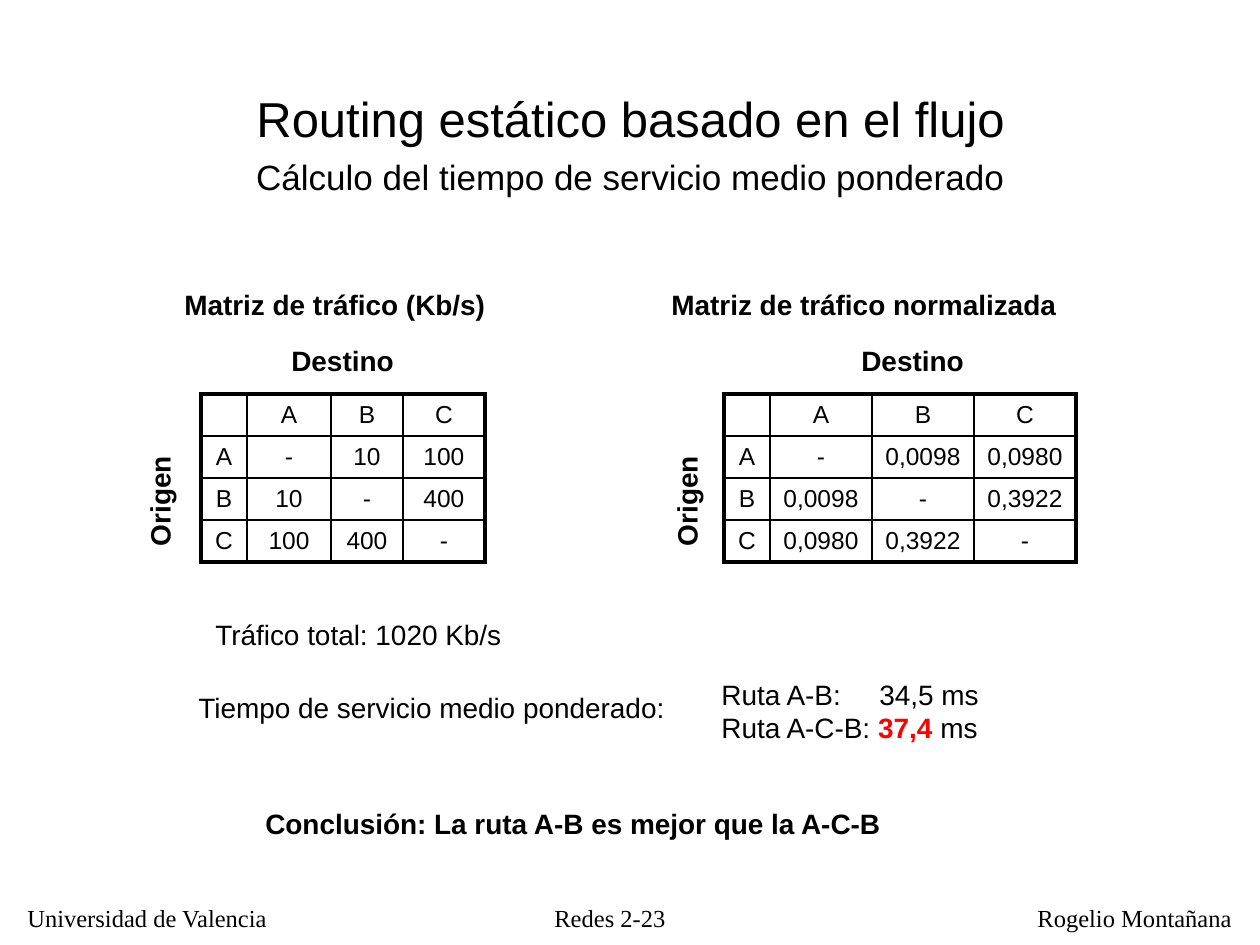
from dataclasses import dataclass

from lxml.etree import SubElement
from pptx import Presentation
from pptx.dml.color import RGBColor
from pptx.enum.text import MSO_ANCHOR, PP_ALIGN
from pptx.oxml.ns import qn
from pptx.util import Pt

EMU_PER_PX = 914400 / 126


@dataclass(frozen=True)
class Theme:
    ink: str = "000000"
    accent: str = "FF0000"
    sans: str = "Arial"
    serif: str = "Times New Roman"
    title: int = 28
    subtitle: int = 20
    body: int = 16
    small: int = 14
    thin: float = 1
    thick: float = 2.25


THEME = Theme()

TITLE = "Routing estático basado en el flujo"
SUBTITLE = "Cálculo del tiempo de servicio medio ponderado"

# text, box (left, top, width, height), alignment
FOOTERS = [
    ("Universidad de Valencia", (15, 897, 275, 41), PP_ALIGN.LEFT),
    ("Redes 2-23", (530, 897, 160, 39), PP_ALIGN.CENTER),
    ("Rogelio Montañana", (1025, 897, 230, 41), PP_ALIGN.LEFT),
]

NODES = ["A", "B", "C"]
MATRICES = [
    {
        "caption": ("Matriz de tráfico (Kb/s)", 172, 328),
        "destination_left": 279,
        "origin_left": 102,
        "table_left": 201,
        "columns": [46, 84, 72, 82],
        "values": [["-", "10", "100"], ["10", "-", "400"], ["100", "400", "-"]],
    },
    {
        "caption": ("Matriz de tráfico normalizada", 659, 412),
        "destination_left": 849,
        "origin_left": 629,
        "table_left": 724,
        "columns": [46, 102, 102, 102],
        "values": [
            ["-", "0,0098", "0,0980"],
            ["0,0098", "-", "0,3922"],
            ["0,0980", "0,3922", "-"],
        ],
    },
]
CAPTION_TOP, DESTINATION_TOP, ORIGIN_TOP, TABLE_TOP = 281, 337, 477, 394
ROW_HEIGHT = 42
LINE_HEIGHT = 47

# text, box, bold
STATEMENTS = [
    ("Tráfico total: 1020 Kb/s", (203, 611, 314, LINE_HEIGHT), False),
    ("Tiempo de servicio medio ponderado:", (186, 684, 494, LINE_HEIGHT), False),
    ("Conclusión: La ruta A-B es mejor que la A-C-B", (253, 800, 645, LINE_HEIGHT), True),
]

ROUTES_BOX = (709, 671, 286, 81)
ROUTE_TAB = 158
DIRECT_ROUTE = "Ruta A-B:\t34,5 ms"
INDIRECT_ROUTE = ["Ruta A-C-B: ", "37,4", " ms"]


def px(length):
    return round(length * EMU_PER_PX)


def set_font(font, size, name=THEME.sans, bold=False, color=THEME.ink):
    font.size = Pt(size)
    font.name = name
    font.bold = bold
    font.color.rgb = RGBColor.from_string(color)


def add_text(slide, lines, box, size=THEME.body, wrap=False, align=PP_ALIGN.LEFT, **style):
    """Add a text box with one paragraph for each line."""
    shape = slide.shapes.add_textbox(*map(px, box))
    frame = shape.text_frame
    frame.word_wrap = wrap
    frame.text = "\n".join(lines)
    for paragraph in frame.paragraphs:
        paragraph.alignment = align
        set_font(paragraph.font, size, **style)
    return shape


def add_title(slide):
    shape = add_text(slide, [TITLE, SUBTITLE], (95, 79, 1071, 116),
                     THEME.title, wrap=True, align=PP_ALIGN.CENTER)
    frame = shape.text_frame
    frame.vertical_anchor = MSO_ANCHOR.MIDDLE
    for paragraph in frame.paragraphs:
        paragraph.line_spacing = 1.2
    frame.paragraphs[1].font.size = Pt(THEME.subtitle)


def set_borders(cell, widths):
    """Draw the cell's edges; widths are points for left, right, top, bottom."""
    properties = cell._tc.get_or_add_tcPr()
    for position, (tag, width) in enumerate(zip(("a:lnL", "a:lnR", "a:lnT", "a:lnB"), widths)):
        line = SubElement(properties, qn(tag), w=str(Pt(width)))
        fill = SubElement(line, qn("a:solidFill"))
        SubElement(fill, qn("a:srgbClr"), val=THEME.ink)
        properties.insert(position, line)


def add_matrix_table(slide, matrix):
    rows = [["", *NODES]] + [[node, *values] for node, values in zip(NODES, matrix["values"])]
    columns = matrix["columns"]
    last_row, last_column = len(rows) - 1, len(columns) - 1
    table = slide.shapes.add_table(
        len(rows), len(columns), px(matrix["table_left"]), px(TABLE_TOP),
        px(sum(columns)), px(ROW_HEIGHT * len(rows))).table
    table.first_row = table.horz_banding = False
    for column, width in zip(table.columns, columns):
        column.width = px(width)
    for r, row in enumerate(rows):
        table.rows[r].height = px(ROW_HEIGHT)
        for c, text in enumerate(row):
            cell = table.cell(r, c)
            cell.text = text
            cell.fill.background()
            cell.vertical_anchor = MSO_ANCHOR.MIDDLE
            cell.margin_left = cell.margin_right = cell.margin_top = cell.margin_bottom = 0
            paragraph = cell.text_frame.paragraphs[0]
            paragraph.alignment = PP_ALIGN.CENTER
            set_font(paragraph.font, THEME.small)
            outer = (c == 0, c == last_column, r == 0, r == last_row)
            set_borders(cell, [THEME.thick if edge else THEME.thin for edge in outer])


def add_matrix(slide, matrix):
    caption, left, width = matrix["caption"]
    add_text(slide, [caption], (left, CAPTION_TOP, width, LINE_HEIGHT), bold=True)
    add_text(slide, ["Destino"],
             (matrix["destination_left"], DESTINATION_TOP, 129, LINE_HEIGHT), bold=True)
    origin = add_text(slide, ["Origen"],
                      (matrix["origin_left"], ORIGIN_TOP, 116, LINE_HEIGHT), bold=True)
    origin.rotation = 270
    add_matrix_table(slide, matrix)


def add_routes(slide):
    shape = add_text(slide, [DIRECT_ROUTE, ""], ROUTES_BOX, wrap=True)
    direct, indirect = shape.text_frame.paragraphs
    tabs = SubElement(direct._p.get_or_add_pPr(), qn("a:tabLst"))
    SubElement(tabs, qn("a:tab"), pos=str(px(ROUTE_TAB)), algn="l")
    direct._p.pPr.insert(0, tabs)
    runs = []
    for text in INDIRECT_ROUTE:
        run = indirect.add_run()
        run.text = text
        runs.append(run)
    set_font(runs[1].font, THEME.body, bold=True, color=THEME.accent)


def main():
    presentation = Presentation()
    presentation.slide_width, presentation.slide_height = px(1260), px(945)
    slide = presentation.slides.add_slide(presentation.slide_layouts[6])
    for text, box, align in FOOTERS:
        add_text(slide, [text], box, THEME.small, wrap=True, align=align, name=THEME.serif)
    add_title(slide)
    for matrix in MATRICES:
        add_matrix(slide, matrix)
    for text, box, bold in STATEMENTS:
        add_text(slide, [text], box, bold=bold)
    add_routes(slide)
    presentation.save("out.pptx")


if __name__ == "__main__":
    main()
